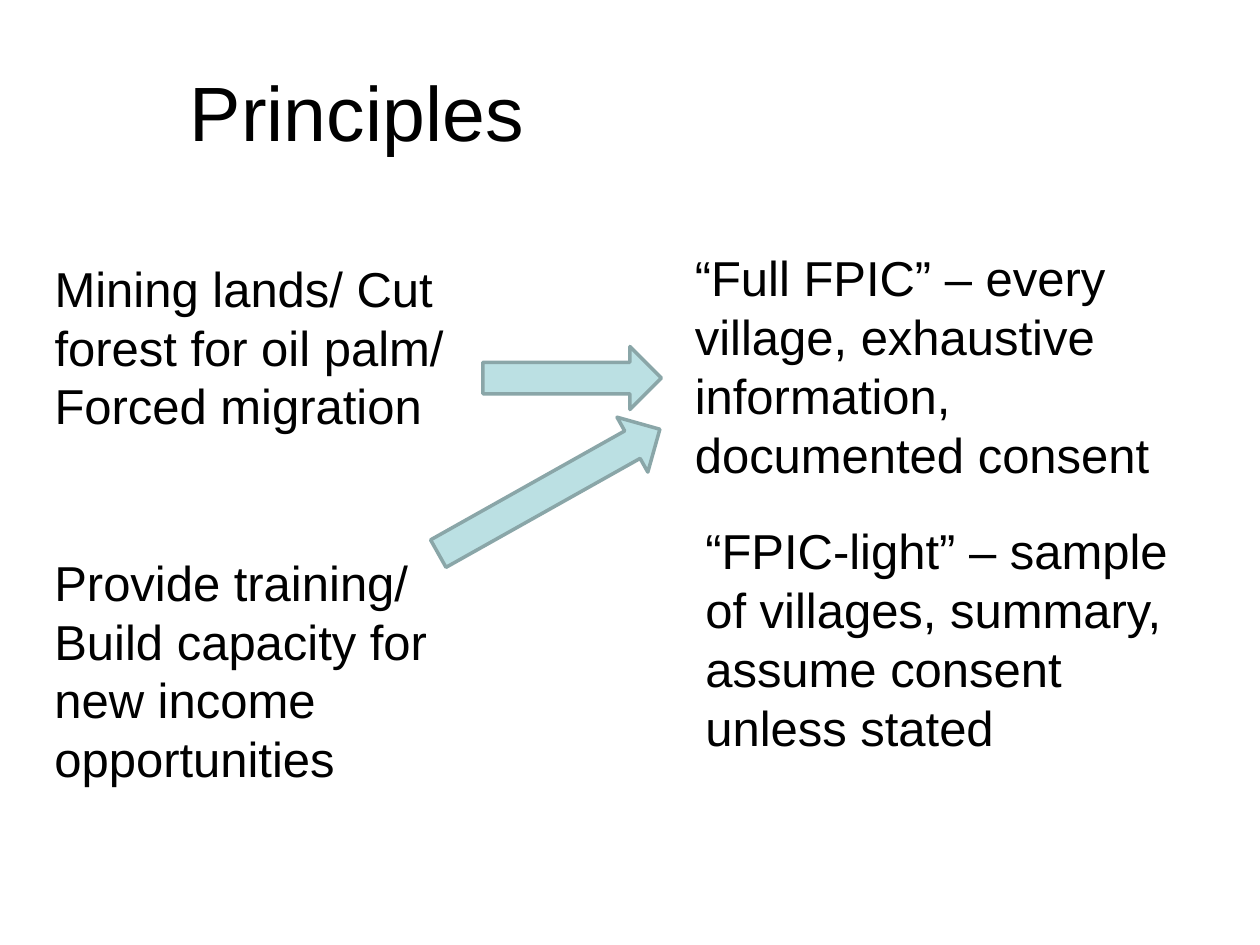
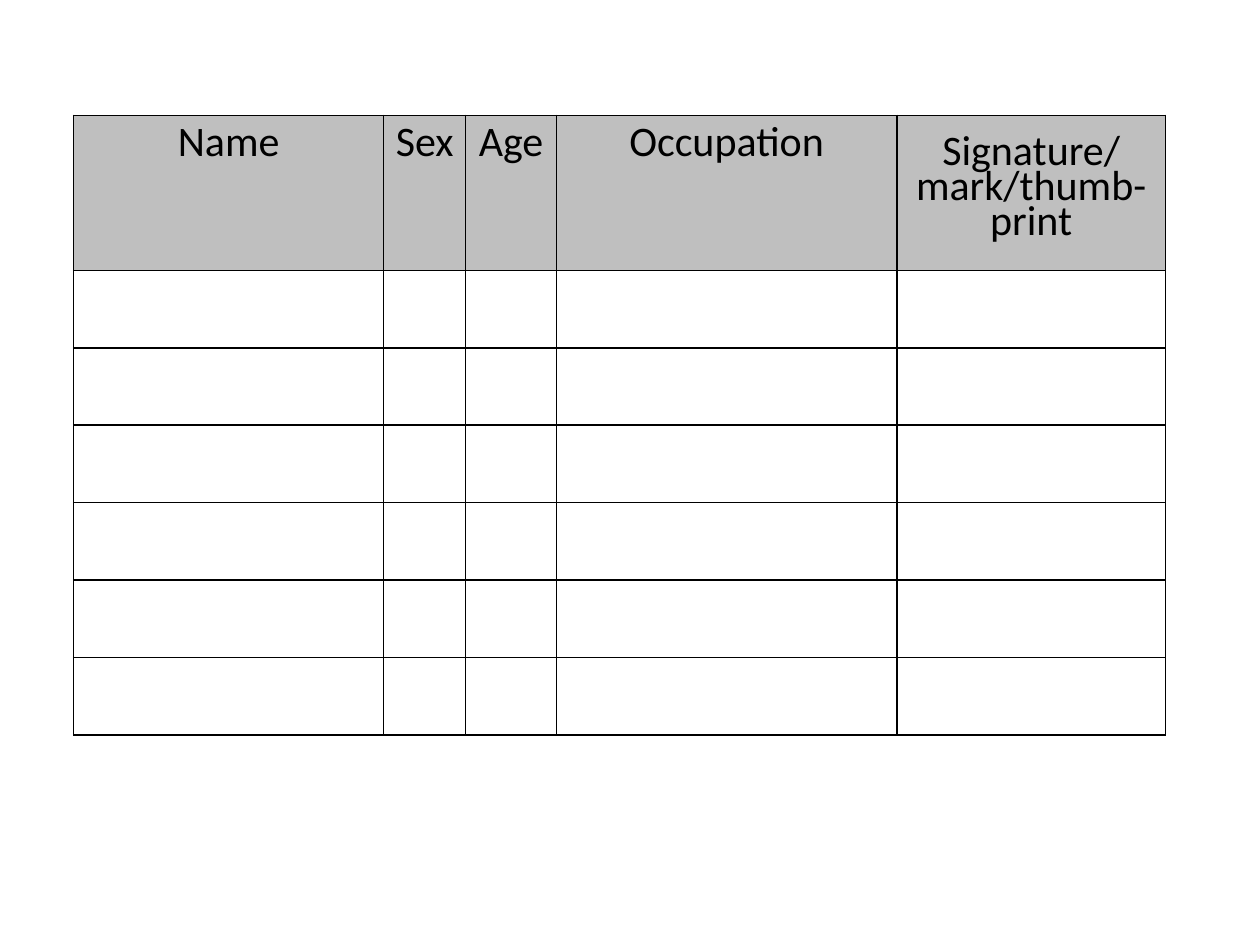
from dataclasses import dataclass
from typing import NamedTuple

from lxml.etree import SubElement
from pptx import Presentation
from pptx.dml.color import RGBColor as Rgb
from pptx.enum.shapes import MSO_SHAPE as Shape
from pptx.enum.text import MSO_ANCHOR as Anchor, MSO_AUTO_SIZE as AutoSize, PP_ALIGN as Align
from pptx.oxml.ns import qn
from pptx.util import Inches, Pt

GRID = Inches(1) // 12


@dataclass(frozen=True)
class Theme:
    """Colours, fonts and type sizes of the presentation."""
    ink: str = "000000"
    arrow: str = "BBE0E3"
    arrow_edge: str = "8AA6A8"
    header: str = "BFBFBF"
    text_font: str = "Arial"
    form_font: str = "Calibri"
    title_size: int = 44
    body_size: int = 28
    form_size: int = 24


class Box(NamedTuple):
    """A rectangle in grid columns and rows, twelve to the inch."""
    col: float
    row: float
    cols: float
    rows: float

    def emu(self):
        """Return left, top, width and height in EMU."""
        return [round(units * GRID) for units in self]


THEME = Theme()
CASES = [
    (Box(4, 24, 45, 19), "Mining lands/ Cut forest for oil palm/ Forced migration"),
    (Box(4, 52, 47, 24), "Provide training/ Build capacity for new income opportunities"),
    (Box(65, 23, 48, 26), "“Full FPIC” – every village, exhaustive information, documented consent"),
    (Box(66, 49, 48, 26), "“FPIC-light” – sample of villages, summary, assume consent unless stated"),
]
ARROWS = [(Box(51.5, 27.5, 6, 17), 270), (Box(49.3, 34.7, 6, 24.2), 240.7)]
FORM_COLUMNS = [
    ("Name", 2.46, 15),
    ("Sex", 0.65, 15),
    ("Age", 0.72, 15),
    ("Occupation", 2.7, 15),
    ("Signature/ mark/thumb-print", 2.13, 20),
]
SIGNATORIES = 6


def style(paragraph, font, size, align):
    """Format one paragraph."""
    paragraph.alignment = align
    paragraph.font.name = font
    paragraph.font.size = Pt(size)
    paragraph.font.color.rgb = Rgb.from_string(THEME.ink)


def write(holder, box, text, size, align=Align.LEFT, anchor=Anchor.TOP):
    """Place a text holder in its box and fill it with one unbulleted paragraph."""
    holder.left, holder.top, holder.width, holder.height = box.emu()
    frame = holder.text_frame
    frame.word_wrap = True
    frame.auto_size = AutoSize.NONE
    frame.vertical_anchor = anchor
    frame.text = text
    paragraph = frame.paragraphs[0]
    paragraph.space_before = Pt(0)
    properties = paragraph._p.get_or_add_pPr()
    properties.set("marL", "0")
    properties.set("indent", "0")
    SubElement(properties, qn("a:buNone"))
    style(paragraph, THEME.text_font, size, align)


def add_arrow(slide, box, rotation):
    """Draw a block arrow turned towards the kind of consent."""
    arrow = slide.shapes.add_shape(Shape.DOWN_ARROW, *box.emu())
    arrow.rotation = rotation
    arrow.shadow.inherit = False
    arrow.fill.solid()
    arrow.fill.fore_color.rgb = Rgb.from_string(THEME.arrow)
    arrow.line.color.rgb = Rgb.from_string(THEME.arrow_edge)
    arrow.line.width = Pt(2)


def principles_slide(deck):
    """Link kinds of project to the consent they call for."""
    slide = deck.slides.add_slide(deck.slide_layouts[1])
    write(slide.shapes.title, Box(4, 3, 60, 15), "Principles", THEME.title_size,
          Align.CENTER, Anchor.MIDDLE)
    for index, (box, text) in enumerate(CASES):
        holder = slide.placeholders[1] if index == 0 else slide.shapes.add_textbox(*box.emu())
        write(holder, box, text, THEME.body_size)
    for box, rotation in ARROWS:
        add_arrow(slide, box, rotation)


def outline(cell):
    """Draw a thin line on all four sides of a cell."""
    properties = cell._tc.get_or_add_tcPr()
    for side in ("lnL", "lnR", "lnT", "lnB"):
        line = SubElement(properties, qn(f"a:{side}"), w=str(Pt(1)))
        SubElement(SubElement(line, qn("a:solidFill")), qn("a:srgbClr"), val=THEME.ink)


def write_heading(cell, heading, spacing):
    """Fill one shaded heading cell."""
    cell.fill.solid()
    cell.fill.fore_color.rgb = Rgb.from_string(THEME.header)
    cell.margin_left = cell.margin_right = Inches(0.07)
    cell.margin_top, cell.margin_bottom = Pt(15), 0
    cell.text = heading
    paragraph = cell.text_frame.paragraphs[0]
    paragraph.line_spacing = Pt(spacing)
    style(paragraph, THEME.form_font, THEME.form_size, Align.CENTER)


def signature_form(slide, box):
    """Build the sign-up table, its heading row twice as high as the others."""
    left, top, width, height = box.emu()
    form = slide.shapes.add_table(SIGNATORIES + 1, len(FORM_COLUMNS), left, top, width, height).table
    form.first_row = form.horz_banding = False
    unit = height // (SIGNATORIES + 2)
    for index, row in enumerate(form.rows):
        row.height = unit * (2 if index == 0 else 1)
    total = sum(share for _, share, _ in FORM_COLUMNS)
    for column, (_, share, _) in zip(form.columns, FORM_COLUMNS):
        column.width = round(width * share / total)
    for cell in form.iter_cells():
        outline(cell)
        cell.fill.background()
    for index, (heading, _, spacing) in enumerate(FORM_COLUMNS):
        write_heading(form.cell(0, index), heading, spacing)


def signatures_slide(deck):
    """Show the blank form that villagers sign."""
    slide = deck.slides.add_slide(deck.slide_layouts[6])
    signature_form(slide, Box(7, 11, 104, 59))


def main():
    """Build and save the presentation."""
    deck = Presentation()
    deck.slide_width, deck.slide_height = Inches(10), Inches(7.5)
    principles_slide(deck)
    signatures_slide(deck)
    deck.save("out.pptx")


if __name__ == "__main__":
    main()
